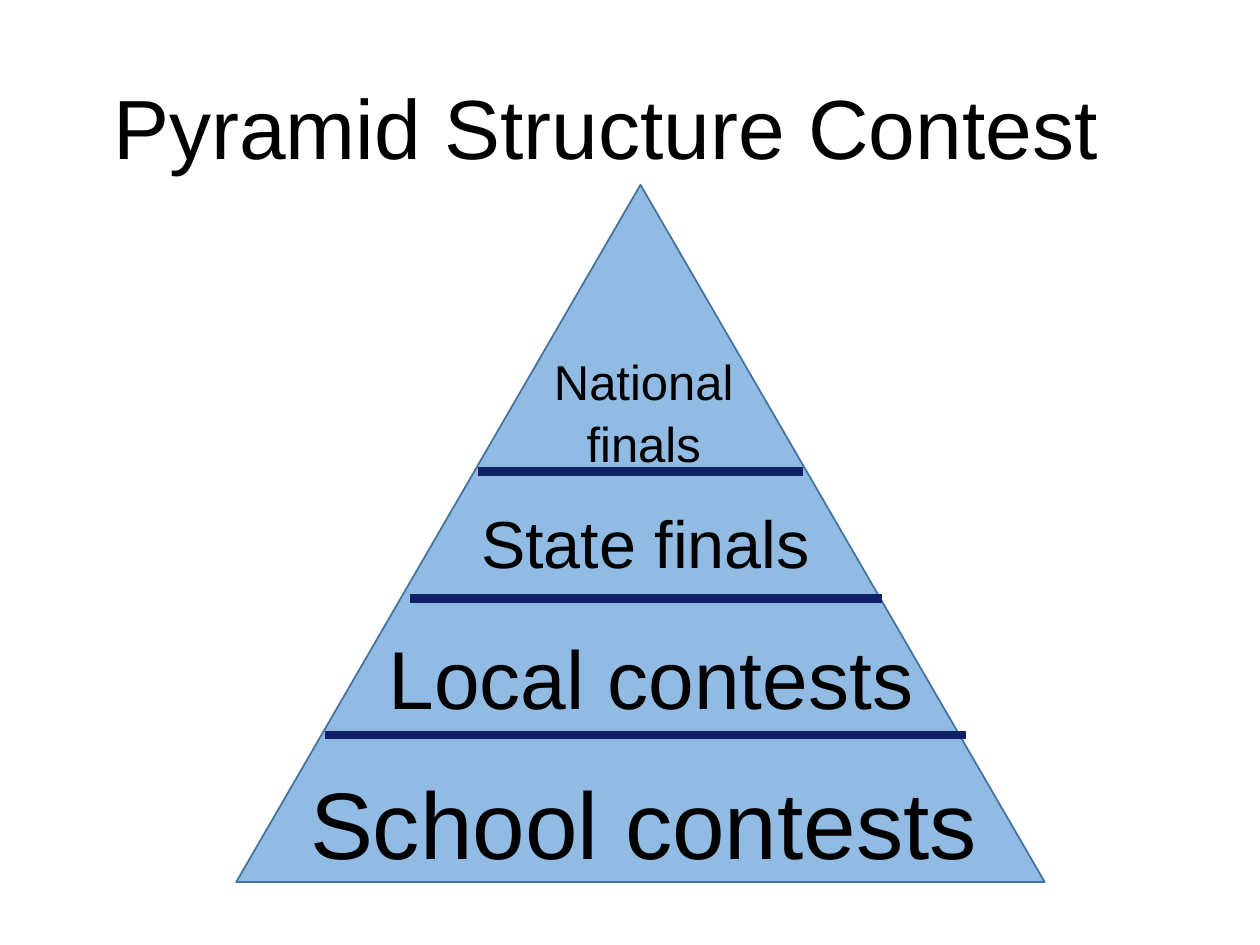
import pptx
import pptx.util
import pptx.dml.color
import pptx.enum.shapes
import pptx.enum.text
import pptx.oxml.ns
import lxml.etree

# Grid of 120 columns by 90 rows
WIDTH, HEIGHT = pptx.util.Inches(10), pptx.util.Inches(7.5)
COL, ROW = WIDTH / 120, HEIGHT / 90

# Text, size, line spacing, box offset from the pyramid's corner
TIERS = [
    ("School contests", 54, 1.3, (-9.2, 51.4, 96, 16.2)),
    ("Local contests", 46.9, 1.3, (-7.5, 38.8, 94, 14.2)),
    ("State finals", 38, 1.3, (-6.5, 27.3, 91, 12)),
    ("National finals", 28, 1.05, (27.8, 15, 22, 15)),
]
# Start column, end column and row, from the same corner
BARS = [(8.5, 69.5, 52.4), (23, 54, 27.3), (16.5, 61.5, 39.4)]


def paint(text):
    return pptx.dml.color.RGBColor.from_string(text)


def scale(box):
    x, y, w, h = box
    return round(x * COL), round(y * ROW), round(w * COL), round(h * ROW)


def write(shape, text, size=28, space=1.0, lead=0.0, right=0.1):
    frame = shape.text_frame
    frame.word_wrap = True
    frame.auto_size = pptx.enum.text.MSO_AUTO_SIZE.NONE
    frame.vertical_anchor = pptx.enum.text.MSO_ANCHOR.TOP
    frame.margin_right = pptx.util.Inches(right)
    para = frame.paragraphs[0]
    para.alignment = pptx.enum.text.PP_ALIGN.CENTER
    para.line_spacing = space
    para.space_before = pptx.util.Pt(round(lead * size, 1))
    run = para.add_run()
    run.text = text
    run.font.name = "Arial"
    run.font.size = pptx.util.Pt(size)
    run.font.color.rgb = paint("000000")


def head(slide, box):
    title = slide.shapes.title
    title.left, title.top, title.width, title.height = scale(box)
    # The wider right margin sets the heading left of centre
    write(title, "Pyramid Structure Contest", size=48, space=1.5,
          lead=0.11, right=0.65)


def pyramid(slide, box):
    x, y = box[:2]
    qn = pptx.oxml.ns.qn

    # Triangle with a see-through fill
    shape = slide.shapes.add_shape(
        pptx.enum.shapes.MSO_SHAPE.ISOSCELES_TRIANGLE, *scale(box))
    shape.shadow.inherit = False
    shape.fill.solid()
    shape.fill.fore_color.rgb = paint("5B9BD5")
    tint = shape.fill._xPr.find(".//" + qn("a:srgbClr"))
    lxml.etree.SubElement(tint, qn("a:alpha")).set("val", "67000")
    shape.line.color.rgb = paint("43739E")
    shape.line.width = pptx.util.Pt(1)

    # Bars between tiers
    for start, end, row in BARS:
        left, top, wide, _ = scale((x + start, y + row, end - start, 0))
        bar = slide.shapes.add_connector(
            pptx.enum.shapes.MSO_CONNECTOR.STRAIGHT,
            left, top, left + wide, top)
        bar.line.color.rgb = paint("0F2067")
        bar.line.width = pptx.util.Pt(5)
        lxml.etree.SubElement(bar._element.spPr, qn("a:effectLst"))

    # Tier names
    for text, size, space, (dx, dy, w, h) in TIERS:
        label = slide.shapes.add_textbox(*scale((x + dx, y + dy, w, h)))
        write(label, text, size=size, space=space,
              lead=0.11 if space > 1.1 else 0.04)


def main():
    deck = pptx.Presentation()
    deck.slide_width, deck.slide_height = WIDTH, HEIGHT
    slide = deck.slides.add_slide(deck.slide_layouts[5])
    head(slide, (8, 1.8, 106, 16))
    pyramid(slide, (22.5, 17.6, 77, 66.4))
    deck.save("out.pptx")


if __name__ == "__main__":
    main()
